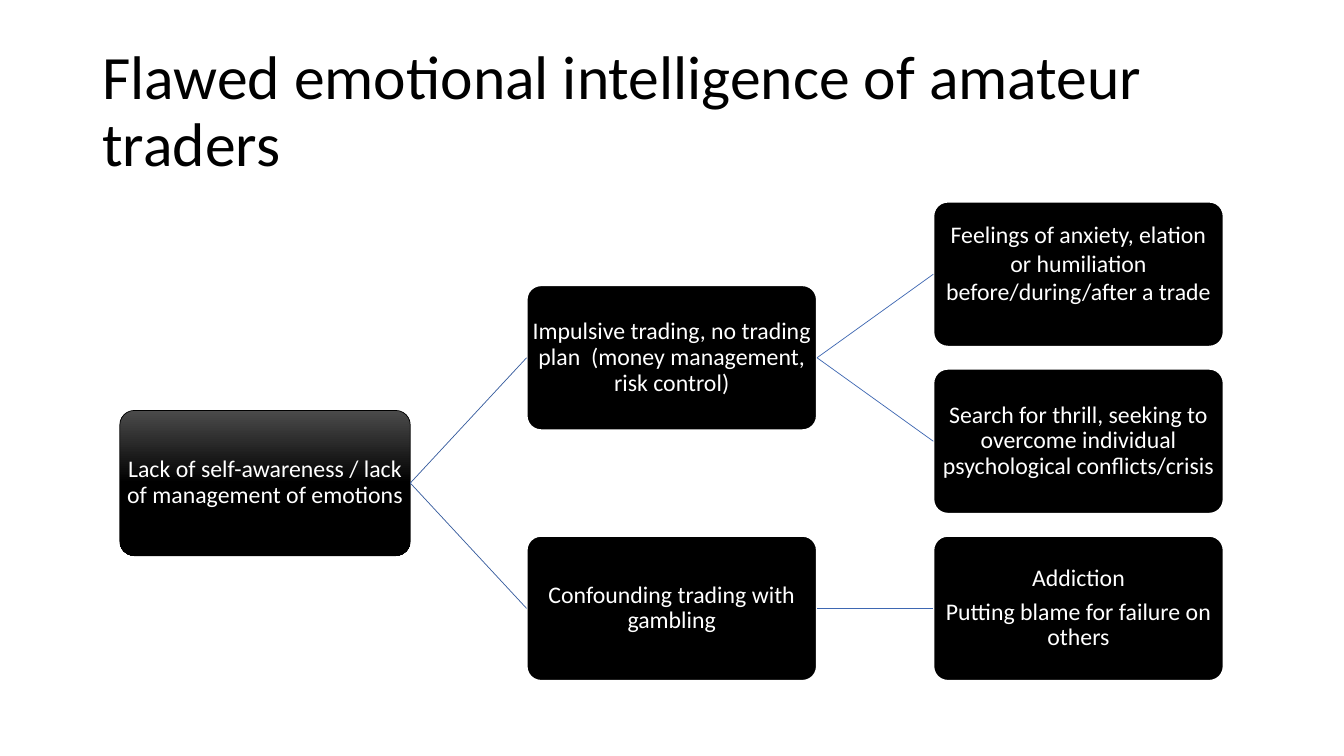
import dataclasses

import lxml.etree
import pptx
import pptx.dml.color
import pptx.enum.shapes
import pptx.enum.text
import pptx.oxml.ns
import pptx.util

Cm = pptx.util.Cm
Pt = pptx.util.Pt
RGB = pptx.dml.color.RGBColor.from_string


@dataclasses.dataclass(frozen=True)
class Theme:
    font: str = "Calibri"
    title_size: int = 44
    box_size: int = 17
    black: str = "000000"
    white: str = "FFFFFF"
    root_top: str = "4B4B4B"
    link_colors: tuple = ("365B9D", "3E67B2")  # by level of the parent


@dataclasses.dataclass
class Node:
    paragraphs: list
    children: list = dataclasses.field(default_factory=list)
    line_spacing: float = 0.9
    bottom_inset: float = 0.03

    def leaves(self):
        return sum(child.leaves() for child in self.children) or 1


# Tree layout, in centimetres
BOX_WIDTH, BOX_HEIGHT = 7.32, 3.66
TREE_LEFT, TREE_TOP = 3.02, 5.08
COLUMN_STEP, ROW_STEP = 10.25, 4.21

TREE = Node(["Lack of self-awareness / lack of management of emotions"], [
    Node(["Impulsive trading, no trading plan  (money management, risk control)"], [
        Node(["Feelings of anxiety, elation or humiliation before/during/after a trade"],
             line_spacing=1.0, bottom_inset=0.6),
        Node(["Search for thrill, seeking to overcome individual psychological conflicts/crisis"]),
    ]),
    Node(["Confounding trading with gambling"], [
        Node(["Addiction", "Putting blame for failure on others"]),
    ]),
])


def write_text(frame, paragraphs, *, font, size, color, align, line_spacing=0.9,
               space_after=0, insets=(0.25, 0.13, 0.25, 0.13)):
    frame.word_wrap = True
    frame.vertical_anchor = pptx.enum.text.MSO_ANCHOR.MIDDLE
    (frame.margin_left, frame.margin_top,
     frame.margin_right, frame.margin_bottom) = map(Cm, insets)
    for index, text in enumerate(paragraphs):
        paragraph = frame.add_paragraph() if index else frame.paragraphs[0]
        paragraph.alignment = align
        paragraph.line_spacing = line_spacing
        paragraph.space_after = Pt(space_after)
        run = paragraph.add_run()
        run.text = text
        run.font.name = font
        run.font.size = Pt(size)
        run.font.color.rgb = RGB(color)


class SlideBuilder:
    def __init__(self, slide, theme):
        self.slide = slide
        self.theme = theme

    def title(self, text, left, top, width, height):
        shape = self.slide.shapes.add_textbox(Cm(left), Cm(top), Cm(width), Cm(height))
        write_text(shape.text_frame, [text], font=self.theme.font,
                   size=self.theme.title_size, color=self.theme.black,
                   align=pptx.enum.text.PP_ALIGN.LEFT)

    def box(self, node, column, row):
        shape = self.slide.shapes.add_shape(
            pptx.enum.shapes.MSO_SHAPE.ROUNDED_RECTANGLE,
            Cm(TREE_LEFT + column * COLUMN_STEP), Cm(TREE_TOP + row * ROW_STEP),
            Cm(BOX_WIDTH), Cm(BOX_HEIGHT))
        shape.adjustments[0] = 0.1
        shape.shadow.inherit = False
        is_root = column == 0
        if is_root:
            shape.fill.gradient()
            shape.fill.gradient_angle = 270
            stops = ((0, self.theme.root_top), (0.5, self.theme.black))
            for stop, (position, color) in zip(shape.fill.gradient_stops, stops):
                stop.position = position
                stop.color.rgb = RGB(color)
        else:
            shape.fill.solid()
            shape.fill.fore_color.rgb = RGB(self.theme.black)
        shape.line.color.rgb = RGB(self.theme.black if is_root else self.theme.white)
        shape.line.width = Pt(0.5 if is_root else 1.5)
        write_text(shape.text_frame, node.paragraphs, font=self.theme.font,
                   size=self.theme.box_size, color=self.theme.white,
                   align=pptx.enum.text.PP_ALIGN.CENTER,
                   line_spacing=node.line_spacing, space_after=6,
                   insets=(0.03, 0.03, 0.03, node.bottom_inset))
        return shape

    def link(self, parent, child, color):
        connector = self.slide.shapes.add_connector(
            pptx.enum.shapes.MSO_CONNECTOR.STRAIGHT, 0, 0, 0, 0)
        connector.begin_connect(parent, 3)
        connector.end_connect(child, 1)
        connector.line.color.rgb = RGB(color)
        connector.line.width = Pt(0.5)
        lxml.etree.SubElement(connector.element.spPr, pptx.oxml.ns.qn("a:effectLst"))

    def tree(self, node, column=0, first_row=0):
        """Draw a branch, each parent centred on its children; return box and row."""
        branches = []
        next_row = first_row
        for child in node.children:
            branches.append(self.tree(child, column + 1, next_row))
            next_row += child.leaves()
        rows = [row for _, row in branches] or [first_row]
        row = sum(rows) / len(rows)
        parent = self.box(node, column, row)
        for child_box, _ in branches:
            self.link(parent, child_box, self.theme.link_colors[column])
        return parent, row


def main():
    presentation = pptx.Presentation()
    presentation.slide_width = Cm(33.87)
    presentation.slide_height = Cm(19.05)
    slide = presentation.slides.add_slide(presentation.slide_layouts[6])
    builder = SlideBuilder(slide, Theme())

    # Heading
    builder.title("Flawed emotional intelligence of amateur traders", 2.33, 1.01, 29.21, 3.68)
    # Cause-and-effect tree
    builder.tree(TREE)

    presentation.save("out.pptx")


if __name__ == "__main__":
    main()
